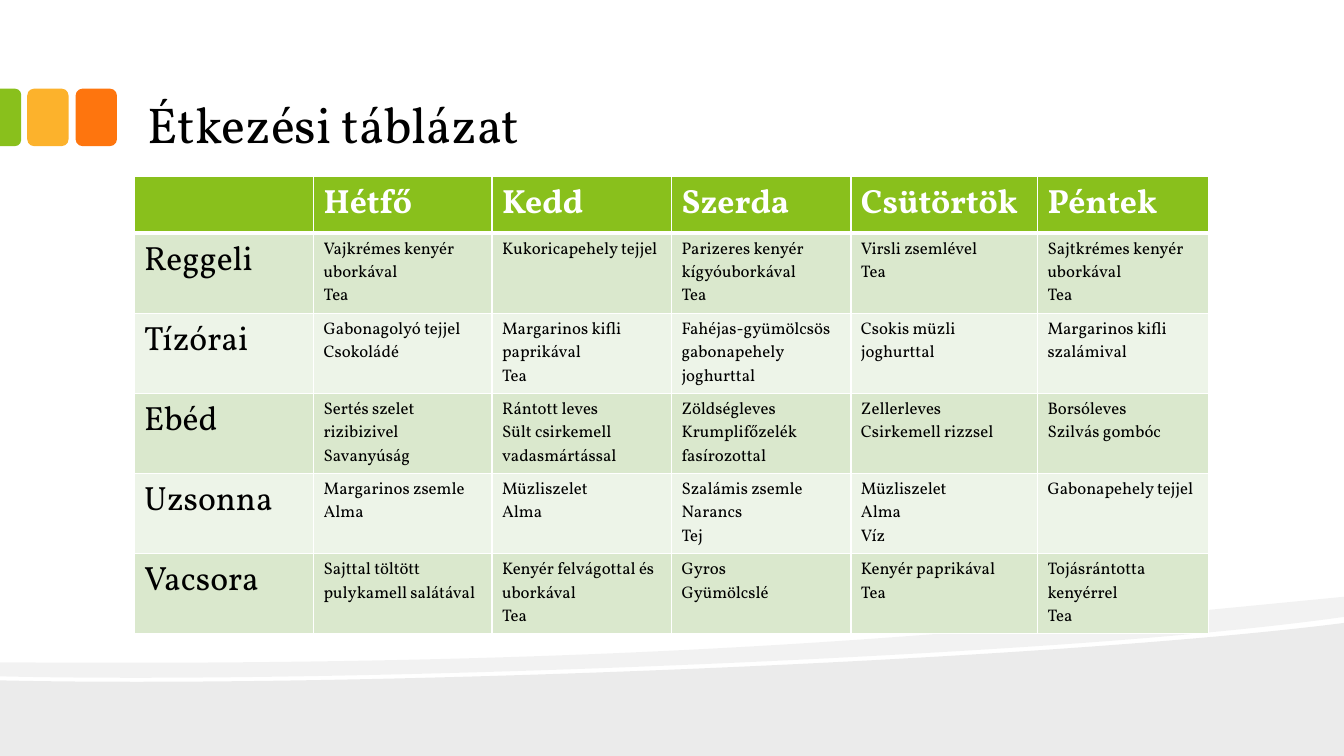
from lxml import etree
from pptx import Presentation
from pptx.dml.color import RGBColor
from pptx.enum.shapes import MSO_SHAPE
from pptx.enum.text import MSO_ANCHOR, PP_ALIGN
from pptx.oxml import parse_xml
from pptx.oxml.ns import nsdecls, qn
from pptx.util import Inches, Pt

COLORS = {
    "green": "89C01C", "yellow": "FCB22C", "orange": "FE750E",
    "black": "000000", "white": "FFFFFF",
    "dark band": "DAE8CD", "light band": "EDF4E8",
}
FONT = "Vollkorn"
TITLE_FORMAT = {"name": FONT, "size": Pt(36), "bold": False}
HEADING_FORMAT = {"name": FONT, "size": Pt(24), "bold": True}
MEAL_FORMAT = {"name": FONT, "size": Pt(24), "bold": False}
DISH_FORMAT = {"name": FONT, "size": Pt(12), "bold": False}

COLUMN_WIDTHS = [1.78, 1.77, 1.78, 1.78, 1.85, 1.7]
HEADER_HEIGHT, MEAL_HEIGHT = 0.5, 0.41
MENU = [
    ["", "Hétfő", "Kedd", "Szerda", "Csütörtök", "Péntek"],
    ["Reggeli", "Vajkrémes kenyér uborkával\nTea", "Kukoricapehely tejjel",
     "Parizeres kenyér kígyóuborkával\nTea", "Virsli zsemlével\nTea",
     "Sajtkrémes kenyér uborkával\nTea"],
    ["Tízórai", "Gabonagolyó tejjel\nCsokoládé", "Margarinos kifli paprikával\nTea",
     "Fahéjas-gyümölcsös gabonapehely joghurttal", "Csokis müzli joghurttal",
     "Margarinos kifli szalámival"],
    ["Ebéd", "Sertés szelet rizibizivel\nSavanyúság",
     "Rántott leves\nSült csirkemell vadasmártással",
     "Zöldségleves\nKrumplifőzelék fasírozottal",
     "Zellerleves\nCsirkemell rizzsel", "Borsóleves\nSzilvás gombóc"],
    ["Uzsonna", "Margarinos zsemle\nAlma", "Müzliszelet\nAlma",
     "Szalámis zsemle\nNarancs\nTej", "Müzliszelet\nAlma\nVíz",
     "Gabonapehely tejjel"],
    ["Vacsora", "Sajttal töltött pulykamell salátával",
     "Kenyér felvágottal és uborkával\nTea", "Gyros\nGyümölcslé",
     "Kenyér paprikával\nTea", "Tojásrántotta kenyérrel\nTea"],
]


def color(name):
    return RGBColor.from_string(COLORS[name])


def format_text(frame, values, color_name):
    for para in frame.paragraphs:
        para.alignment = PP_ALIGN.LEFT
        for span in para.runs:
            for key, value in values.items():
                setattr(span.font, key, value)
            span.font.color.rgb = color(color_name)


def paint(shape, color_name, opacity=100):
    shape.shadow.inherit = False
    shape.line.fill.background()
    shape.fill.solid()
    shape.fill.fore_color.rgb = color(color_name)
    if opacity < 100:
        tint = shape.fill._xPr.find(".//{*}srgbClr")
        tint.append(parse_xml(f'<a:alpha {nsdecls("a")} val="{opacity * 1000}"/>'))


def add_wave(page, points, curve_starts, opacity):
    points = [(Inches(x), Inches(y)) for x, y in points]
    builder = page.shapes.build_freeform(*points[0])
    builder.add_line_segments(points[1:], close=True)
    wave = builder.convert_to_shape()
    lines = list(wave._element.iter(qn("a:lnTo")))
    for start in curve_starts:
        first, *others = lines[start:start + 3]
        bend = etree.Element(qn("a:cubicBezTo"))
        first.addprevious(bend)
        for line in (first, *others):
            bend.append(line[0])
            line.getparent().remove(line)
    paint(wave, "black", opacity)


def add_tab(page, kind, left, top, width, height, color_name):
    tab = page.shapes.add_shape(kind, Inches(left), Inches(top),
                                Inches(width), Inches(height))
    paint(tab, color_name)
    return tab


def add_title(page, text):
    title = page.shapes.title
    title.left, title.top = Inches(1.33), Inches(0.17)
    title.width, title.height = Inches(10.66), Inches(1.42)
    frame = title.text_frame
    frame.text = text
    margins = {"margin_left": 0.13, "margin_right": 0.13,
               "margin_top": 0.07, "margin_bottom": 0.07}
    for key, value in margins.items():
        setattr(frame, key, Inches(value))
    frame.word_wrap = True
    frame.vertical_anchor = MSO_ANCHOR.BOTTOM
    format_text(frame, TITLE_FORMAT, "black")


def add_borders(cell, widths):
    for side, width in widths.items():
        cell._tc.get_or_add_tcPr().append(parse_xml(
            f'<a:ln{side} {nsdecls("a")} w="{Pt(width)}"><a:solidFill>'
            f'<a:srgbClr val="{COLORS["white"]}"/></a:solidFill></a:ln{side}>'))


def fill_cell(cell, text, row, column):
    if row == 0:
        values, text_color, band = HEADING_FORMAT, "white", "green"
    else:
        values = DISH_FORMAT if column else MEAL_FORMAT
        text_color = "black"
        band = "dark band" if row % 2 else "light band"
    if text:
        cell.text = text
        format_text(cell.text_frame, values, text_color)
    add_borders(cell, {"L": 1, "R": 1, "T": 3 if row == 1 else 1,
                       "B": 3 if row == 0 else 1})
    cell.fill.solid()
    cell.fill.fore_color.rgb = color(band)


def add_menu(page):
    heights = [HEADER_HEIGHT] + [MEAL_HEIGHT] * (len(MENU) - 1)
    holder = page.shapes.add_table(
        len(MENU), len(COLUMN_WIDTHS), Inches(1.33), Inches(1.75),
        Inches(sum(COLUMN_WIDTHS)), Inches(4))
    table = holder.table
    for column, width in zip(table.columns, COLUMN_WIDTHS):
        column.width = Inches(width)
    for row, height in zip(table.rows, heights):
        row.height = Inches(height)
    holder.height = Inches(4)
    for row, texts in enumerate(MENU):
        for column, text in enumerate(texts):
            fill_cell(table.cell(row, column), text, row, column)


def main():
    deck = Presentation()
    deck.slide_width, deck.slide_height = Inches(13.33), Inches(7.5)
    page = deck.slides.add_slide(deck.slide_layouts[5])

    add_wave(page, [(13.33, 6.18), (13.33, 7.5), (0, 7.5), (0, 6.75),
                    (3.52, 6.83), (10.42, 6.55), (13.33, 6.18)], [3], 8)
    add_wave(page, [(13.33, 5.92), (13.33, 6.12),
                    (12.55, 6.23), (11.49, 6.33), (10.29, 6.41),
                    (6.98, 6.63), (2.58, 6.77), (0, 6.71), (0, 6.57),
                    (6.52, 6.62), (9.71, 6.27), (13.33, 5.92)], [1, 4, 8], 5)

    add_tab(page, MSO_SHAPE.ROUNDED_RECTANGLE, 0.75, 0.88, 0.41, 0.57, "orange")
    add_tab(page, MSO_SHAPE.ROUNDED_RECTANGLE, 0.27, 0.88, 0.41, 0.57, "yellow")
    edge_tab = add_tab(page, MSO_SHAPE.ROUND_2_SAME_RECTANGLE,
                       -0.18, 1.06, 0.57, 0.21, "green")
    edge_tab.rotation = 90
    edge_tab.adjustments[0] = 0.29

    add_title(page, "Étkezési táblázat")
    add_menu(page)
    deck.save("out.pptx")


if __name__ == "__main__":
    main()
